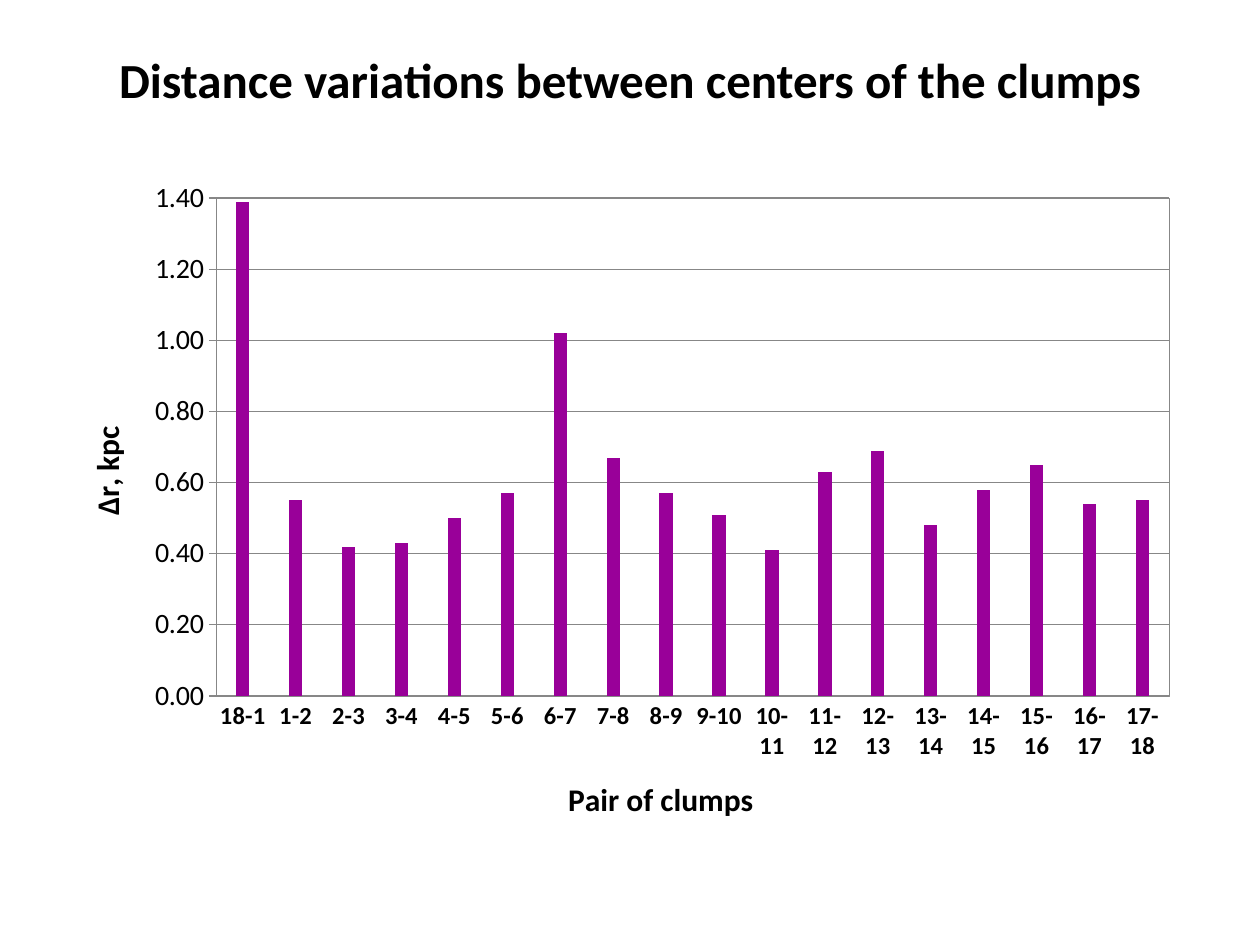
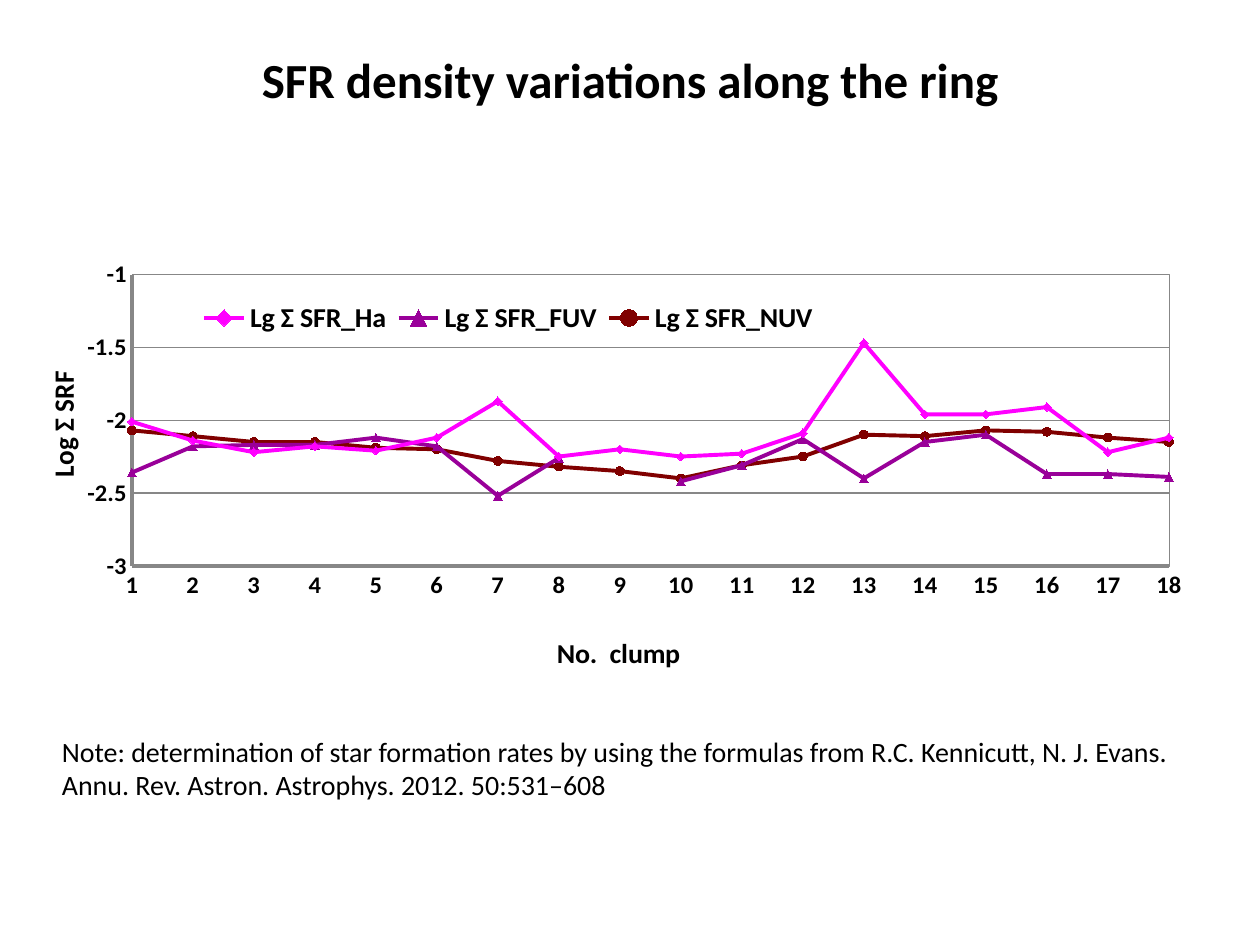
from dataclasses import dataclass
from typing import Any, Optional

import pptx
import pptx.chart.data
import pptx.dml.color
import pptx.enum.chart
import pptx.enum.text
import pptx.oxml
import pptx.oxml.ns
import pptx.util

Cm = pptx.util.Cm
Pt = pptx.util.Pt
qn = pptx.oxml.ns.qn
Kind = pptx.enum.chart.XL_CHART_TYPE
Tick = pptx.enum.chart.XL_TICK_MARK
Mark = pptx.enum.chart.XL_MARKER_STYLE

# Shared style
FONT = "Calibri"
BLACK, GREY, PURPLE = "000000", "878787", "990099"


@dataclass
class Box:
    """Left, top, width and height in centimetres."""
    left: float
    top: float
    width: float
    height: float

    def lengths(self) -> list[int]:
        return [Cm(n) for n in (self.left, self.top, self.width, self.height)]


@dataclass
class Axis:
    title: str
    left: float  # title place, in percent of the chart
    top: float
    title_size: int
    size: int
    bold: bool = True
    low: Optional[float] = None
    high: Optional[float] = None
    step: Optional[float] = None
    tick: Any = Tick.NONE
    line: float = 0.75
    grid: bool = False
    turned: bool = False


@dataclass
class Curve:
    name: str
    color: str
    mark: Any
    values: list[Optional[float]]


HEAD = Box(1.27, 0, 22.86, 3.18)
NOTE = Box(1, 14.68, 23.83, 1.63)

# Distances between neighbouring clumps
PAIRS = ["18-1"] + [f"{n}-{n + 1}" for n in range(1, 18)]
GAPS = [1.39, 0.55, 0.42, 0.43, 0.5, 0.57, 1.02, 0.67, 0.57,
        0.51, 0.41, 0.63, 0.69, 0.48, 0.58, 0.65, 0.54, 0.55]

# Star formation rates by clump; the first point is empty
CLUMPS = [None, *range(1, 19)]
CURVES = [
    Curve("Lg Σ SFR_Ha", "FF00FF", Mark.DIAMOND,
          [None, -2.01, -2.14, -2.22, -2.18, -2.21, -2.12, -1.87, -2.25, -2.2,
           -2.25, -2.23, -2.09, -1.47, -1.96, -1.96, -1.91, -2.22, -2.12]),
    Curve("Lg Σ SFR_FUV", PURPLE, Mark.TRIANGLE,
          [None, -2.36, -2.18, -2.17, -2.17, -2.12, -2.18, -2.52, -2.26, None,
           -2.42, -2.31, -2.13, -2.4, -2.15, -2.1, -2.37, -2.37, -2.39]),
    Curve("Lg Σ SFR_NUV", "800000", Mark.CIRCLE,
          [None, -2.07, -2.11, -2.15, -2.15, -2.19, -2.2, -2.28, -2.32, -2.35,
           -2.4, -2.31, -2.25, -2.1, -2.11, -2.07, -2.08, -2.12, -2.15]),
]


def rgb(color: str) -> pptx.dml.color.RGBColor:
    return pptx.dml.color.RGBColor.from_string(color)


def set_font(font: Any, size: int, bold: bool = False) -> None:
    font.name, font.size, font.bold = FONT, Pt(size), bold
    font.color.rgb = rgb(BLACK)


def set_line(line: Any, color: str, width: float) -> None:
    line.color.rgb = rgb(color)
    line.width = Pt(width)


def set_fill(fill: Any, color: str) -> None:
    fill.solid()
    fill.fore_color.rgb = rgb(color)


def add_text(slide: Any, box: Box, text: str, size: int,
             head: bool = False) -> None:
    frame = slide.shapes.add_textbox(*box.lengths()).text_frame
    frame.word_wrap = True
    para = frame.paragraphs[0]
    para.text = text
    set_font(para.font, size, head)
    if head:
        frame.vertical_anchor = pptx.enum.text.MSO_ANCHOR.MIDDLE
        para.alignment = pptx.enum.text.PP_ALIGN.CENTER


def add_slide(deck: Any, title: str) -> Any:
    slide = deck.slides.add_slide(deck.slide_layouts[6])
    add_text(slide, HEAD, title, 28, head=True)
    return slide


def place(part: Any, spot: int, shares: list[float],
          inner: bool = False) -> None:
    """Fix a chart part at x, y, w, h in percent of the chart."""
    old = part.find(qn("c:layout"))
    if old is not None:
        part.remove(old)
    sizes = [f"{share / 100:g}" for share in shares]
    tags = [("xMode", "edge"), ("yMode", "edge"), *zip("xywh", sizes)]
    if inner:
        tags.insert(0, ("layoutTarget", "inner"))
    body = "".join(f'<c:{tag} val="{val}"/>' for tag, val in tags)
    part.insert(spot, pptx.oxml.parse_xml(
        f'<c:layout {pptx.oxml.ns.nsdecls("c")}>'
        f"<c:manualLayout>{body}</c:manualLayout></c:layout>"))


def style_axis(axis: Any, look: Axis) -> None:
    axis.minimum_scale, axis.maximum_scale = look.low, look.high
    if look.step:
        axis.major_unit = look.step
    axis.major_tick_mark, axis.minor_tick_mark = look.tick, Tick.NONE
    axis.crosses = pptx.enum.chart.XL_AXIS_CROSSES.MINIMUM
    set_font(axis.tick_labels.font, look.size, look.bold)
    set_line(axis.format.line, GREY, look.line)
    axis.has_major_gridlines = look.grid
    if look.grid:
        set_line(axis.major_gridlines.format.line, GREY, 0.75)
    # Axis title
    frame = axis.axis_title.text_frame
    frame.text = look.title
    set_font(frame.paragraphs[0].font, look.title_size, True)
    part = axis.axis_title._element
    if look.turned:
        body = part.find(".//" + qn("a:bodyPr"))
        body.set("rot", "-5400000")
        body.set("vert", "horz")
    place(part, 1, [look.left, look.top])


def add_chart(slide: Any, kind: Any, box: Box, data: Any,
              plot: list[float], across: Axis, up: Axis) -> Any:
    chart = slide.shapes.add_chart(kind, *box.lengths(), data).chart
    chart.has_title = chart.has_legend = False
    set_font(chart.font, 10)
    chart.plots[0].vary_by_categories = False
    style_axis(chart.category_axis, across)
    style_axis(chart.value_axis, up)
    # Plot area with a thin frame
    area = chart._chartSpace.find(".//" + qn("c:plotArea"))
    place(area, 0, plot, inner=True)
    area.append(pptx.oxml.parse_xml(
        f'<c:spPr {pptx.oxml.ns.nsdecls("c", "a")}><a:noFill/>'
        f'<a:ln w="{Pt(0.25)}"><a:solidFill><a:srgbClr val="{GREY}"/>'
        "</a:solidFill></a:ln></c:spPr>"))
    return chart


def draw_gaps(deck: Any) -> None:
    slide = add_slide(deck, "Distance variations between centers of the clumps")
    data = pptx.chart.data.CategoryChartData(number_format="0.00")
    data.categories = PAIRS
    data.add_series("Series 1", GAPS)
    chart = add_chart(
        slide, Kind.COLUMN_CLUSTERED, Box(1.19, 3.38, 22.81, 13.69), data,
        [13.9, 4.5, 84.2, 73.3],
        Axis("Pair of clumps", 44.5, 89, 18, 14),
        Axis("Δr, kpc", 1.8, 37.2, 18, 16, bold=False, low=0, high=1.4,
             step=0.2, tick=Tick.CROSS, grid=True, turned=True))
    labels = chart.value_axis.tick_labels
    labels.number_format, labels.number_format_is_linked = "0.00", False
    chart.plots[0].gap_width = 300
    set_fill(chart.series[0].format.fill, PURPLE)


def draw_rates(deck: Any) -> None:
    slide = add_slide(deck, "SFR density variations along the ring")
    data = pptx.chart.data.XyChartData()
    for curve in CURVES:
        row = data.add_series(curve.name)
        for clump, value in zip(CLUMPS, curve.values):
            row.add_data_point(clump, value)
    chart = add_chart(
        slide, Kind.XY_SCATTER_LINES, Box(0.79, 4.95, 23.65, 8.74), data,
        [7.9, 6.9, 88.4, 69],
        Axis("No.  clump", 43.7, 91, 16, 14, low=1, high=18, step=1,
             line=2.25),
        Axis("Log Σ SRF", 0, 29.2, 16, 14, low=-3, high=-1, step=0.5,
             line=2.25, grid=True, turned=True))
    # Curves and their markers
    for series, curve in zip(chart.series, CURVES):
        set_line(series.format.line, curve.color, 2.25)
        mark = series.marker
        mark.style, mark.size = curve.mark, 5
        set_fill(mark.format.fill, curve.color)
        set_line(mark.format.line, curve.color, 0.75)
    for smooth in chart._chartSpace.iter(qn("c:smooth")):
        smooth.set("val", "0")
    # Legend inside the plot
    chart.has_legend = True
    legend = chart.legend
    legend.position = pptx.enum.chart.XL_LEGEND_POSITION.BOTTOM
    legend.include_in_layout = True
    set_font(legend.font, 16, True)
    place(legend._element, 1, [13, 12.2, 54, 10])
    add_text(slide, NOTE,
             "Note: determination of star formation rates by using the "
             "formulas from R.C. Kennicutt, N. J. Evans. Annu. Rev. Astron. "
             "Astrophys. 2012. 50:531–608", 16)


def main() -> None:
    deck = pptx.Presentation()
    deck.slide_width, deck.slide_height = Cm(25.4), Cm(19.05)
    draw_gaps(deck)
    draw_rates(deck)
    deck.save("out.pptx")


if __name__ == "__main__":
    main()
